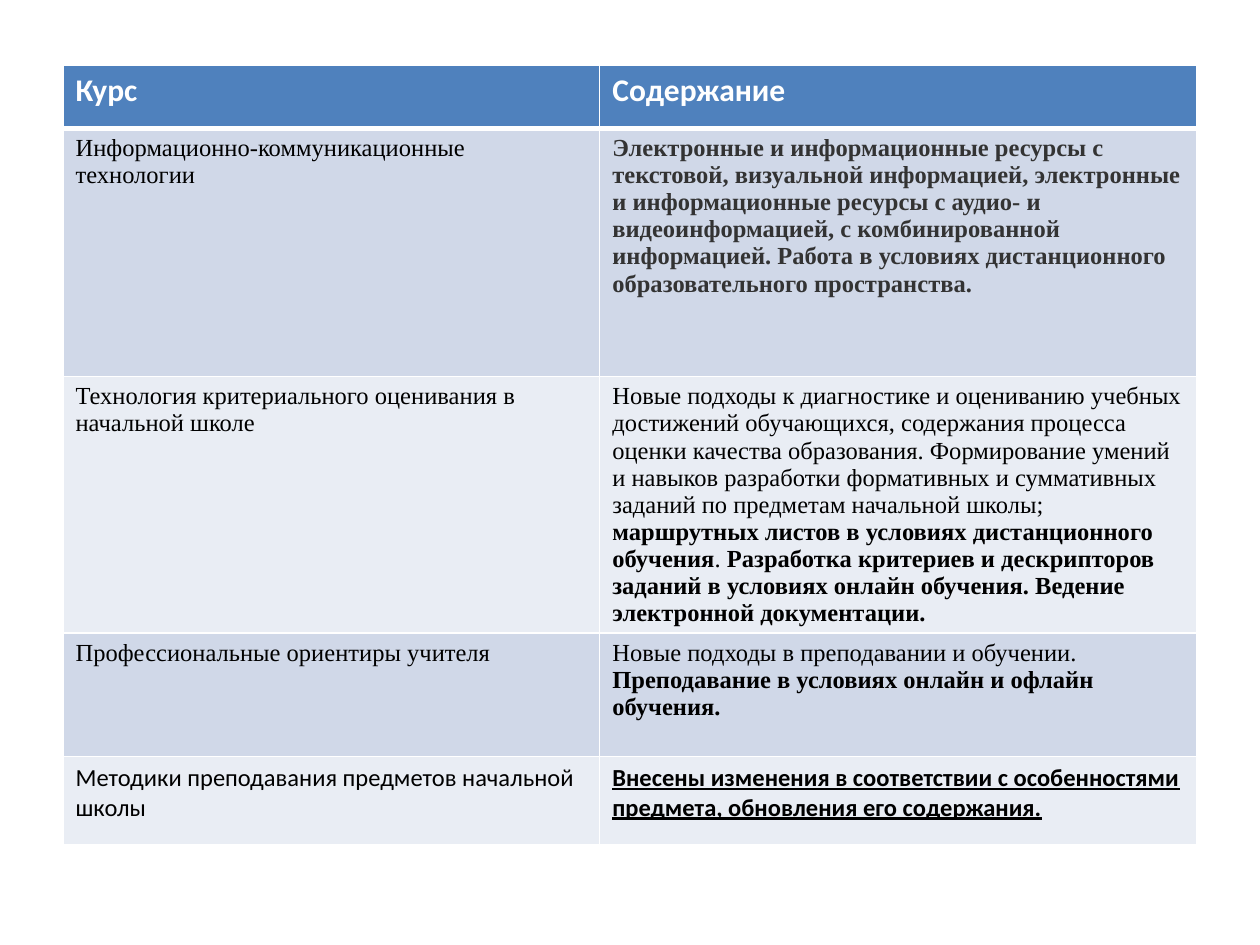
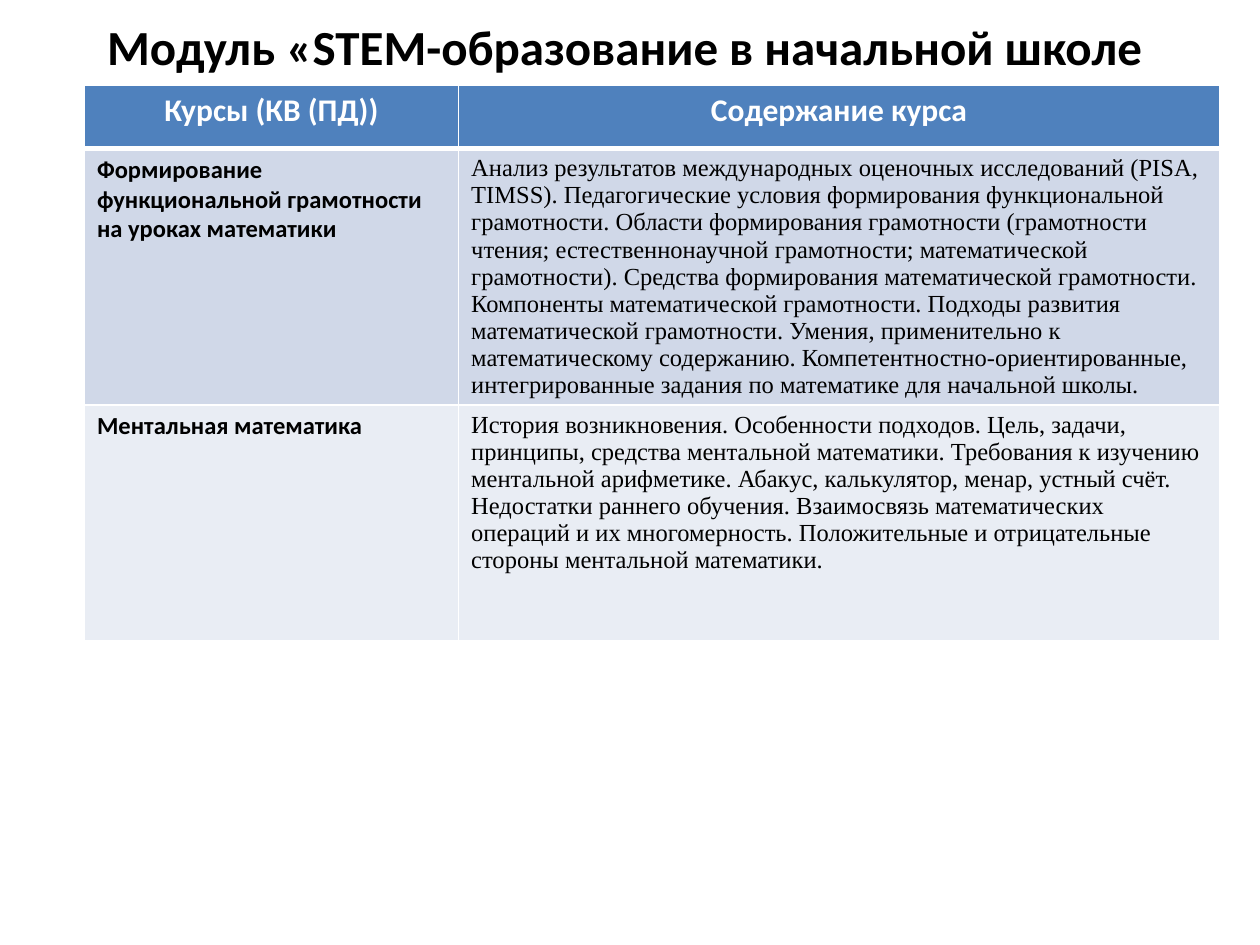
"""Builds two slides with tables of courses and their content."""
from lxml import etree
from pptx import Presentation
from pptx import util as u
from pptx.dml.color import RGBColor
from pptx.enum import text
from pptx.oxml.ns import qn

WIDTH, HEIGHT = u.Inches(10), u.Inches(7.5)
COLOURS = {
    "header": "4F81BD", "odd": "D0D8E8", "even": "E9EDF4",
    "white": "FFFFFF", "black": "000000", "grey": "333333",
}
SERIF = {"name": "Times New Roman", "size": u.Pt(14), "bold": False, "colour": "black"}
SERIF_BOLD = {**SERIF, "bold": True}
SERIF_GREY = {**SERIF_BOLD, "colour": "grey"}
SANS = {**SERIF, "name": "Calibri"}
SANS_BOLD = {**SANS, "bold": True}
SANS_UNDERLINED = {**SANS_BOLD, "underline": True}
HEADER = {**SANS_BOLD, "size": u.Pt(18), "colour": "white"}
TITLE = {**SANS_BOLD, "size": u.Pt(28)}

COURSES = [
    [[("Курс", HEADER)], [("Содержание", HEADER)]],
    [[("Информационно-коммуникационные технологии", SERIF)],
     [("Электронные и информационные ресурсы с текстовой, визуальной информацией, "
       "электронные и информационные ресурсы с аудио- и видеоинформацией, "
       "с комбинированной информацией. Работа в условиях дистанционного "
       "образовательного пространства.", SERIF_GREY)]],
    [[("Технология критериального оценивания в начальной школе", SERIF)],
     [("Новые подходы к диагностике и оцениванию учебных достижений обучающихся, "
       "содержания процесса оценки качества образования. Формирование умений и навыков "
       "разработки формативных и суммативных заданий по предметам начальной школы; ", SERIF),
      ("маршрутных листов в условиях дистанционного обучения", SERIF_BOLD),
      (". ", SERIF),
      ("Разработка критериев и дескрипторов заданий в условиях онлайн обучения. "
       "Ведение электронной документации.", SERIF_BOLD)]],
    [[("Профессиональные ориентиры учителя", SERIF)],
     [("Новые подходы в преподавании и обучении. ", SERIF),
      ("Преподавание в условиях онлайн и офлайн обучения.", SERIF_BOLD)]],
    [[("Методики преподавания предметов начальной школы", SANS)],
     [("Внесены изменения в соответствии с особенностями предмета, "
       "обновления его содержания.", SANS_UNDERLINED)]],
]
STEM_COURSES = [
    [[("Курсы (КВ (ПД))", HEADER)], [("Содержание курса", HEADER)]],
    [[("Формирование функциональной грамотности на уроках математики", SANS_BOLD)],
     [("Анализ результатов международных оценочных исследований (PISA, TIMSS). "
       "Педагогические условия формирования функциональной грамотности. Области "
       "формирования грамотности (грамотности чтения; естественнонаучной грамотности; "
       "математической грамотности). Средства формирования математической грамотности. "
       "Компоненты математической грамотности. Подходы развития математической "
       "грамотности. Умения, применительно к математическому содержанию. "
       "Компетентностно-ориентированные, интегрированные задания по математике "
       "для начальной школы.", SERIF)]],
    [[("Ментальная математика", SANS_BOLD)],
     [("История возникновения. Особенности подходов. Цель, задачи, принципы, средства "
       "ментальной математики. Требования к изучению ментальной арифметике. Абакус, "
       "калькулятор, менар, устный счёт. Недостатки раннего обучения. Взаимосвязь "
       "математических операций и их многомерность. Положительные и отрицательные "
       "стороны ментальной математики.", SERIF)]],
]


def write(para, spans, align):
    """Fill a paragraph with formatted spans."""
    para.alignment = align
    for wording, style in spans:
        span = para.add_run()
        span.text = wording
        for key, value in style.items():
            if key == "colour":
                span.font.color.rgb = RGBColor.from_string(COLOURS[value])
            else:
                setattr(span.font, key, value)


def add_borders(cell, is_header):
    """Draw white cell borders, heavier under the header."""
    properties = cell._tc.get_or_add_tcPr()
    widths = {"L": 1, "R": 1, "T": 1, "B": 3 if is_header else 1}
    for side, points in widths.items():
        line = etree.SubElement(properties, qn(f"a:ln{side}"), w=str(u.Pt(points)))
        fill = etree.SubElement(line, qn("a:solidFill"))
        etree.SubElement(fill, qn("a:srgbClr"), val=COLOURS["white"])


def add_course_table(page, origin, columns, heights, rows, header_align):
    """Add a banded table; columns and heights are in inches."""
    frame = page.shapes.add_table(
        len(rows), len(columns), u.Inches(origin[0]), u.Inches(origin[1]),
        u.Inches(sum(columns)), u.Inches(sum(heights)))
    table = frame.table
    for column, width in zip(table.columns, columns):
        column.width = u.Inches(width)
    for index, (row, height) in enumerate(zip(table.rows, heights)):
        row.height = u.Inches(height)
        is_header = index == 0
        band = "header" if is_header else ("even", "odd")[index % 2]
        align = header_align if is_header else text.PP_ALIGN.LEFT
        for cell, spans in zip(row.cells, rows[index]):
            write(cell.text_frame.paragraphs[0], spans, align)
            add_borders(cell, is_header)
            cell.fill.solid()
            cell.fill.fore_color.rgb = RGBColor.from_string(COLOURS[band])


def set_title(page, wording):
    """Place and format the title placeholder."""
    box = page.shapes.title
    place = {"left": 0.05 * WIDTH, "top": 0.017 * HEIGHT,
             "width": 0.9 * WIDTH, "height": 0.063 * HEIGHT}
    for key, value in place.items():
        setattr(box, key, int(value))
    box.text_frame.auto_size = text.MSO_AUTO_SIZE.NONE
    box.text_frame.vertical_anchor = text.MSO_ANCHOR.MIDDLE
    write(box.text_frame.paragraphs[0], [(wording, TITLE)], text.PP_ALIGN.CENTER)


def main():
    """Build and save the deck."""
    deck = Presentation()
    deck.slide_width, deck.slide_height = WIDTH, HEIGHT
    title_only, blank = deck.slide_layouts[5], deck.slide_layouts[6]

    page = deck.slides.add_slide(blank)
    add_course_table(page, (0.5, 0.52), (4.26, 4.74), (0.5, 1.97, 2.03, 0.98, 0.7),
                     COURSES, text.PP_ALIGN.LEFT)

    page = deck.slides.add_slide(title_only)
    set_title(page, "Модуль «STEM-образование в начальной школе ")
    add_course_table(page, (0.67, 0.68), (2.97, 6.04), (0.5, 2.03, 1.87),
                     STEM_COURSES, text.PP_ALIGN.CENTER)
    deck.save("out.pptx")


if __name__ == "__main__":
    main()
